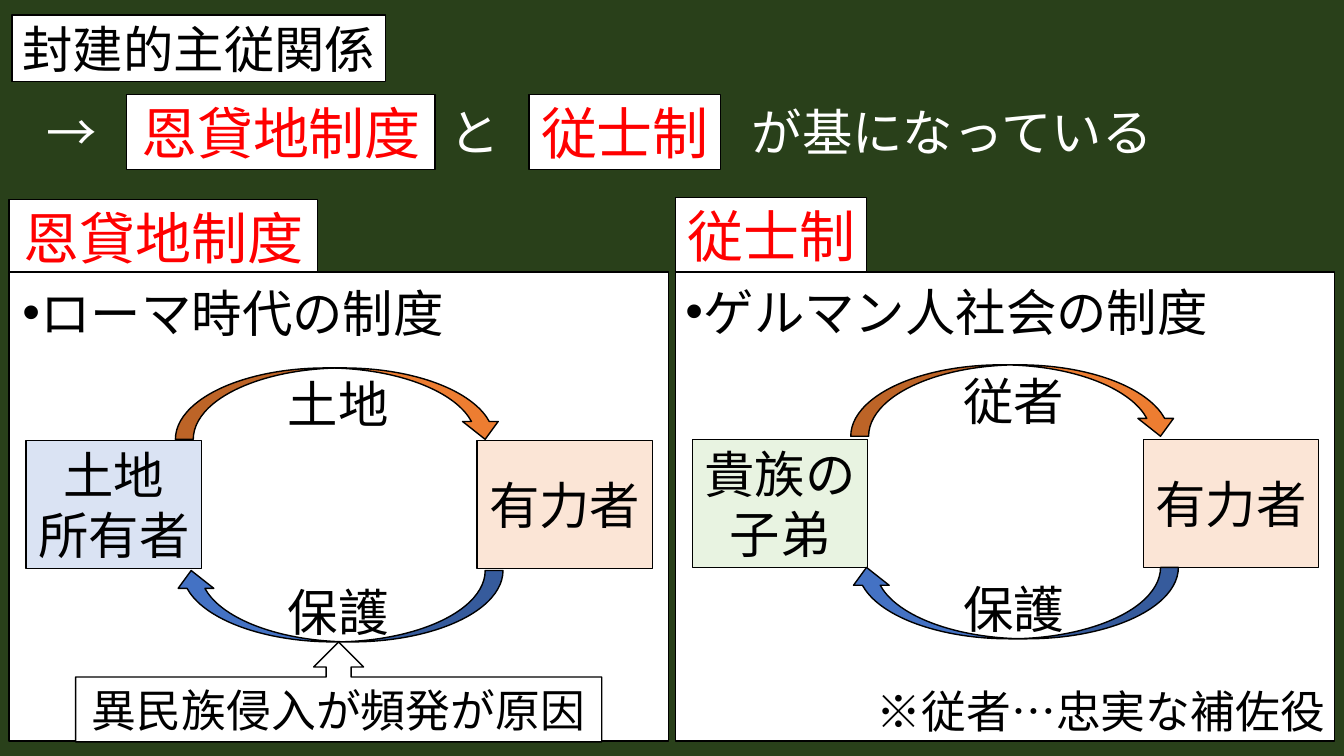
from lxml import etree
from pptx import Presentation
from pptx import util as u
from pptx.dml.color import RGBColor
from pptx.enum import shapes, text
from pptx.oxml.ns import qn

BLACK, WHITE, RED = "000000", "FFFFFF", "FF0000"
PANEL_WIDTH, PANEL_HEIGHT = 471, 335
NODE_WIDTH, NODE_HEIGHT = 125.3, 91.5
TERM_HEIGHT = 53.3


def colour(value):
    return RGBColor.from_string(value)


def place(shape, left, top, width, height):
    shape.left, shape.top = u.Pt(left), u.Pt(top)
    shape.width, shape.height = u.Pt(width), u.Pt(height)


def outline(shape, fill):
    shape.shadow.inherit = False
    shape.fill.solid()
    shape.fill.fore_color.rgb = colour(fill)
    shape.line.color.rgb = colour(BLACK)
    shape.line.width = u.Pt(1)


def write(shape, words, size, ink=BLACK, align=text.PP_ALIGN.CENTER,
          anchor=text.MSO_ANCHOR.MIDDLE, side_margin=0):
    frame = shape.text_frame
    frame.text = words
    frame.word_wrap = True
    frame.auto_size = text.MSO_AUTO_SIZE.NONE
    frame.vertical_anchor = anchor
    frame.margin_left = frame.margin_right = u.Pt(side_margin)
    for paragraph in frame.paragraphs:
        paragraph.alignment = align
        paragraph.space_before = u.Pt(0)
        for run in paragraph.runs:
            run.font.name = "Arial"
            run.font.size = u.Pt(size)
            run.font.color.rgb = colour(ink)


def add_box(slide, left, top, width, height, fill=WHITE,
            kind=shapes.MSO_SHAPE.RECTANGLE):
    shape = slide.shapes.add_shape(
        kind, u.Pt(left), u.Pt(top), u.Pt(width), u.Pt(height))
    outline(shape, fill)
    return shape


def add_text(slide, left, top, width, height, words, size, **style):
    shape = slide.shapes.add_textbox(
        u.Pt(left), u.Pt(top), u.Pt(width), u.Pt(height))
    write(shape, words, size, anchor=text.MSO_ANCHOR.TOP, **style)
    return shape


def add_term(slide, left, top, width, words):
    write(add_box(slide, left, top, width, TERM_HEIGHT), words, 40, RED)


def add_heading(slide, left, top):
    title = slide.shapes.title
    place(title, left, top, 267, 47.5)
    outline(title, WHITE)
    write(title, "封建的主従関係", 36)

    sentence = add_text(slide, left + 17.3, top + 57.6, 895, 51,
                        "→\tと\tが基になっている", 36, ink=WHITE,
                        align=text.PP_ALIGN.LEFT, side_margin=7.2)
    properties = sentence.text_frame.paragraphs[0]._p.get_or_add_pPr()
    tabs = etree.SubElement(properties, qn("a:tabLst"))
    for position in (288, 504):
        etree.SubElement(tabs, qn("a:tab"), pos=str(u.Pt(position)), algn="l")
    add_term(slide, left + 82, top + 56.9, 220.3, "恩貸地制度")
    add_term(slide, left + 369.4, top + 56.9, 136.8, "従士制")


def add_bullet_line(slide, placeholder, left, top, words):
    """Bring the body placeholder in front of its panel as a bulleted line."""
    slide.shapes.element.append(placeholder.element)
    place(placeholder, left, top, 420, 51)
    write(placeholder, words, 36, align=text.PP_ALIGN.LEFT,
          anchor=text.MSO_ANCHOR.TOP, side_margin=7.2)
    properties = placeholder.text_frame.paragraphs[0]._p.get_or_add_pPr()
    properties.set("marL", str(u.Pt(13)))
    properties.set("indent", str(u.Pt(-13)))
    etree.SubElement(properties, qn("a:buFont"), typeface="Arial")
    etree.SubElement(properties, qn("a:buChar"), char="•")


def add_cycle(slide, left, top, arrow_left, arrow_top, giver, giver_fill, service):
    """Two parties facing each other, joined by curved arrows."""
    parties = ((0, giver, giver_fill), (322, "有力者", "FBE5D6"))
    for offset, words, fill in parties:
        write(add_box(slide, left + offset, top, NODE_WIDTH, NODE_HEIGHT, fill),
              words, 36)
    exchanges = ((0, 0, service, 0, "ED7D31", 0),
                 (-1.5, 144.7, "保護", 149, "4472C4", 180))
    for shift, offset, words, text_offset, fill, rotation in exchanges:
        arrow = add_box(slide, arrow_left + shift, arrow_top + offset,
                        234 - shift, 51, fill,
                        shapes.MSO_SHAPE.CURVED_DOWN_ARROW)
        arrow.rotation = rotation
        add_text(slide, arrow_left + 72.7, arrow_top + text_offset, 87, 51,
                 words, 36)


def add_panel(slide, left, top, term, term_width, term_rise, placeholder,
              bullet_at, bullet, node_drop, arrow_at, giver, giver_fill, service):
    add_term(slide, left, top - term_rise, term_width, term)
    add_box(slide, left, top, PANEL_WIDTH, PANEL_HEIGHT)
    add_bullet_line(slide, placeholder, left + bullet_at[0], top + bullet_at[1],
                    bullet)
    add_cycle(slide, left + 12.2, top + node_drop, left + arrow_at[0],
              top + arrow_at[1], giver, giver_fill, service)


def add_benefice_panel(slide, left, top):
    add_panel(slide, left, top, "恩貸地制度", 220.3, 51.8, slide.placeholders[1],
              (2.2, 3.6), "ローマ時代の制度", 120.2, (118.8, 68.4),
              "土地\n所有者", "DAE3F3", "土地")
    cause = add_box(slide, left + 47.5, top + 264.2, 375.8, 71.3,
                    kind=shapes.MSO_SHAPE.UP_ARROW_CALLOUT)
    write(cause, "異民族侵入が頻発が原因", 32)


def add_retinue_panel(slide, left, top):
    add_panel(slide, left, top, "従士制", 136.8, 53.3, slide.placeholders[2],
              (0, 2.9), "ゲルマン人社会の制度", 119.5, (125.3, 66.2),
              "貴族の\n子弟", "E8F3E1", "従者")
    add_text(slide, left + 136.8, top + 290.2, 344, 46, "※従者…忠実な補佐役", 32,
             align=text.PP_ALIGN.LEFT, side_margin=7.2)


def main():
    presentation = Presentation()
    presentation.slide_width, presentation.slide_height = u.Pt(960), u.Pt(540)
    slide = presentation.slides.add_slide(presentation.slide_layouts[3])
    slide.background.fill.solid()
    slide.background.fill.fore_color.rgb = colour("29401A")
    add_heading(slide, 8.6, 10.8)
    add_benefice_panel(slide, 6.5, 194.4)
    add_retinue_panel(slide, 482.4, 194.4)
    presentation.save("out.pptx")


if __name__ == "__main__":
    main()
